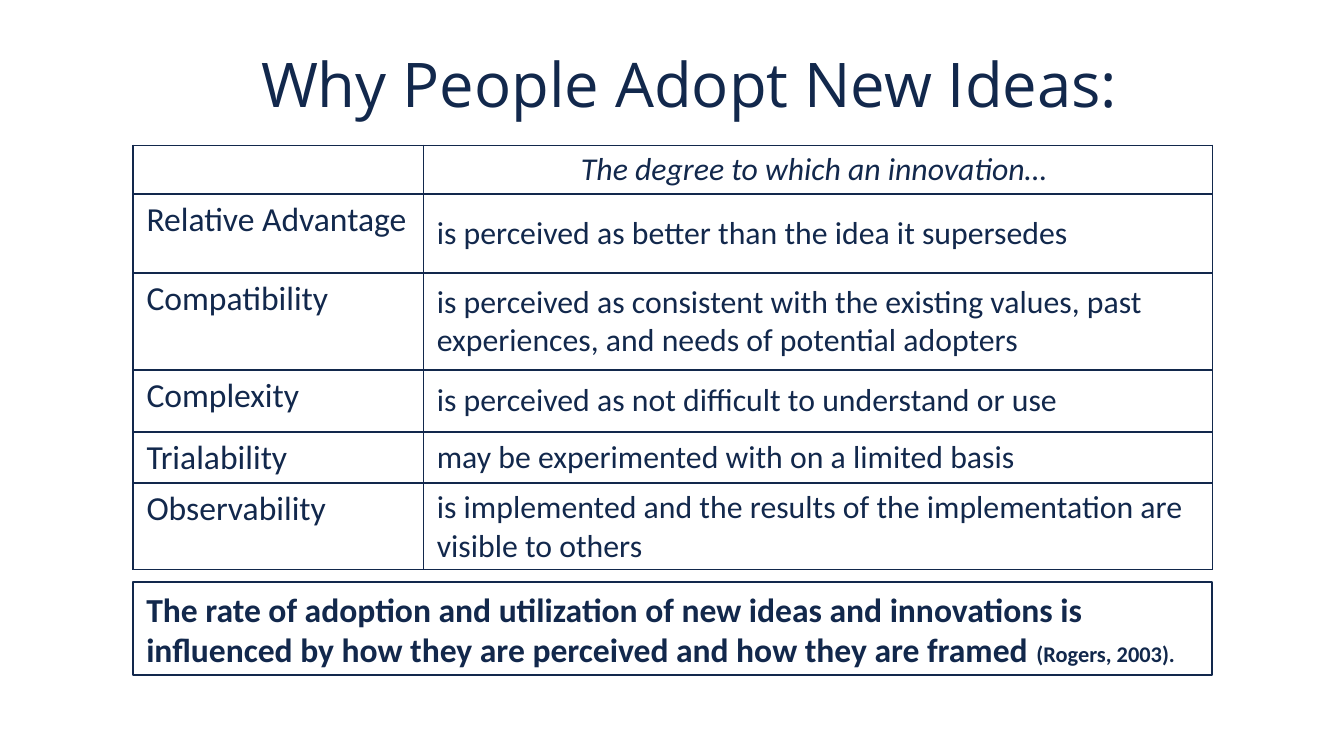
from lxml.etree import SubElement
from pptx import Presentation
from pptx.dml.color import RGBColor
from pptx.enum.shapes import MSO_SHAPE
from pptx.enum.text import MSO_ANCHOR, PP_ALIGN
from pptx.oxml.ns import qn
from pptx.util import Inches, Pt

COLORS = {"navy": "12284C"}
NAVY = RGBColor.from_string(COLORS["navy"])
COLUMN_WIDTHS = [2.16, 5.87]
ROW_HEIGHTS = [0.34, 0.59, 0.72, 0.46, 0.36, 0.6]
ROWS = [
    ("", "The degree to which an innovation… "),
    ("Relative Advantage", "is perceived as better than the idea it supersedes"),
    ("Compatibility", "is perceived as consistent with the existing values, past "
     "experiences, and needs of potential adopters"),
    ("Complexity", "is perceived as not difficult to understand or use"),
    ("Trialability", "may be experimented with on a limited basis"),
    ("Observability", "is implemented and the results of the implementation are "
     "visible to others"),
]


def style_font(font, size, name="Calibri"):
    """Give a font its face, size and the navy colour."""
    font.name, font.size = name, Pt(size)
    font.color.rgb = NAVY


def set_margins(area, left, top, right, bottom):
    """Set the inner margins of a cell or text frame, in inches."""
    area.margin_left, area.margin_top = Inches(left), Inches(top)
    area.margin_right, area.margin_bottom = Inches(right), Inches(bottom)


def draw_borders(cell, widths):
    """Outline a cell, given side names with widths in points."""
    properties = cell._tc.get_or_add_tcPr()
    for side, width in widths.items():
        line = SubElement(properties, qn(f"a:ln{side}"), w=str(Pt(width)))
        fill = SubElement(line, qn("a:solidFill"))
        SubElement(fill, qn("a:srgbClr"), val=COLORS["navy"])


def add_title(page, left, top, width, height):
    """Place the centred heading."""
    box = page.shapes.add_textbox(Inches(left), Inches(top), Inches(width), Inches(height))
    frame = box.text_frame
    frame.word_wrap = True
    frame.vertical_anchor = MSO_ANCHOR.BOTTOM
    set_margins(frame, 0.4, 0.1, 0.1, 0)
    para = frame.paragraphs[0]
    para.text = "Why People Adopt New Ideas: "
    para.alignment = PP_ALIGN.CENTER
    para.line_spacing = 0.9
    style_font(para.font, 33, "Open Sans")


def fill_cell(cell, text, row, column):
    """Write one table cell and draw its borders."""
    edge = 0.04 if text else 0
    set_margins(cell, 0.1, edge, 0.1, edge)
    para = cell.text_frame.paragraphs[0]
    para.text = text
    is_header = row == 0
    style_font(para.font, 17 if column or is_header else 18)
    if is_header:
        para.font.italic = True
        para.alignment = PP_ALIGN.CENTER
    elif column:
        cell.vertical_anchor = MSO_ANCHOR.MIDDLE
    draw_borders(cell, {
        "L": 1 if column else 0.75,
        "R": 0.75 if column else 1,
        "T": 0.75 if is_header else 1,
        "B": 0.75 if row == len(ROWS) - 1 else 1,
    })
    cell.fill.background()


def add_attributes_table(page, left, top):
    """Place the table of five innovation attributes."""
    table = page.shapes.add_table(
        len(ROWS), len(COLUMN_WIDTHS), Inches(left), Inches(top),
        Inches(sum(COLUMN_WIDTHS)), Inches(sum(ROW_HEIGHTS))).table
    table.first_row = table.horz_banding = False
    for column, width in zip(table.columns, COLUMN_WIDTHS):
        column.width = Inches(width)
    for row, height in zip(table.rows, ROW_HEIGHTS):
        row.height = Inches(height)
    for row, texts in enumerate(ROWS):
        for column, text in enumerate(texts):
            fill_cell(table.cell(row, column), text, row, column)


def add_conclusion(page, left, top, width, height):
    """Place the outlined conclusion with its citation."""
    box = page.shapes.add_shape(
        MSO_SHAPE.RECTANGLE, Inches(left), Inches(top), Inches(width), Inches(height))
    box.shadow.inherit = False
    box.fill.background()
    box.line.color.rgb = NAVY
    box.line.width = Pt(1)
    frame = box.text_frame
    frame.word_wrap = True
    frame.vertical_anchor = MSO_ANCHOR.TOP
    set_margins(frame, 0.1, 0.05, 0.1, 0.05)
    para = frame.paragraphs[0]
    para.alignment = PP_ALIGN.LEFT
    for text, size in [
        ("The rate of adoption and utilization of new ideas and innovations is "
         "influenced by how they are perceived and how they are framed ", 18),
        ("(Rogers, 2003).", 12),
    ]:
        span = para.add_run()
        span.text = text
        style_font(span.font, size)
        span.font.bold = True


def main():
    """Build and save the widescreen deck."""
    deck = Presentation()
    deck.slide_width = Inches(10)
    deck.slide_height = deck.slide_width * 9 // 16
    page = deck.slides.add_slide(deck.slide_layouts[6])
    add_title(page, 0.75, 0.26, 8.58, 0.64)
    add_attributes_table(page, 0.99, 1.08)
    add_conclusion(page, 0.99, 4.33, 8.03, 0.69)
    deck.save("out.pptx")


if __name__ == "__main__":
    main()
